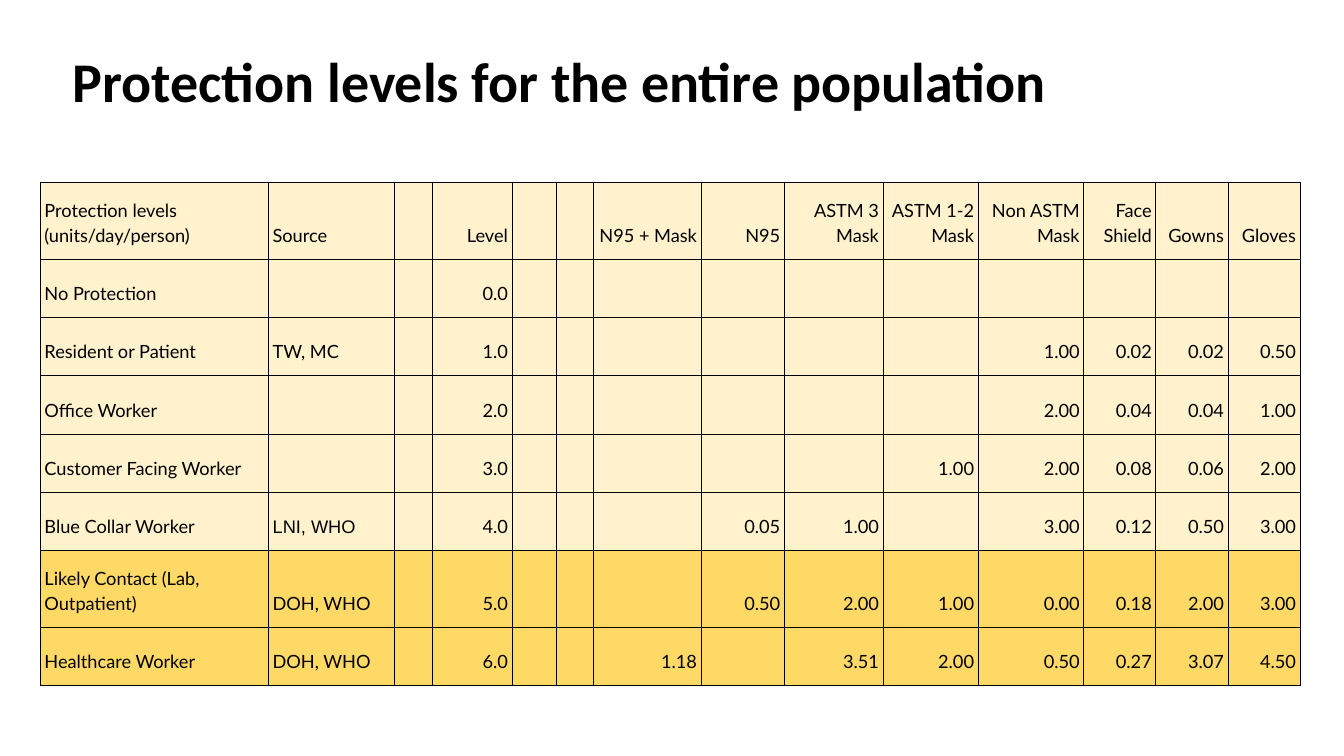
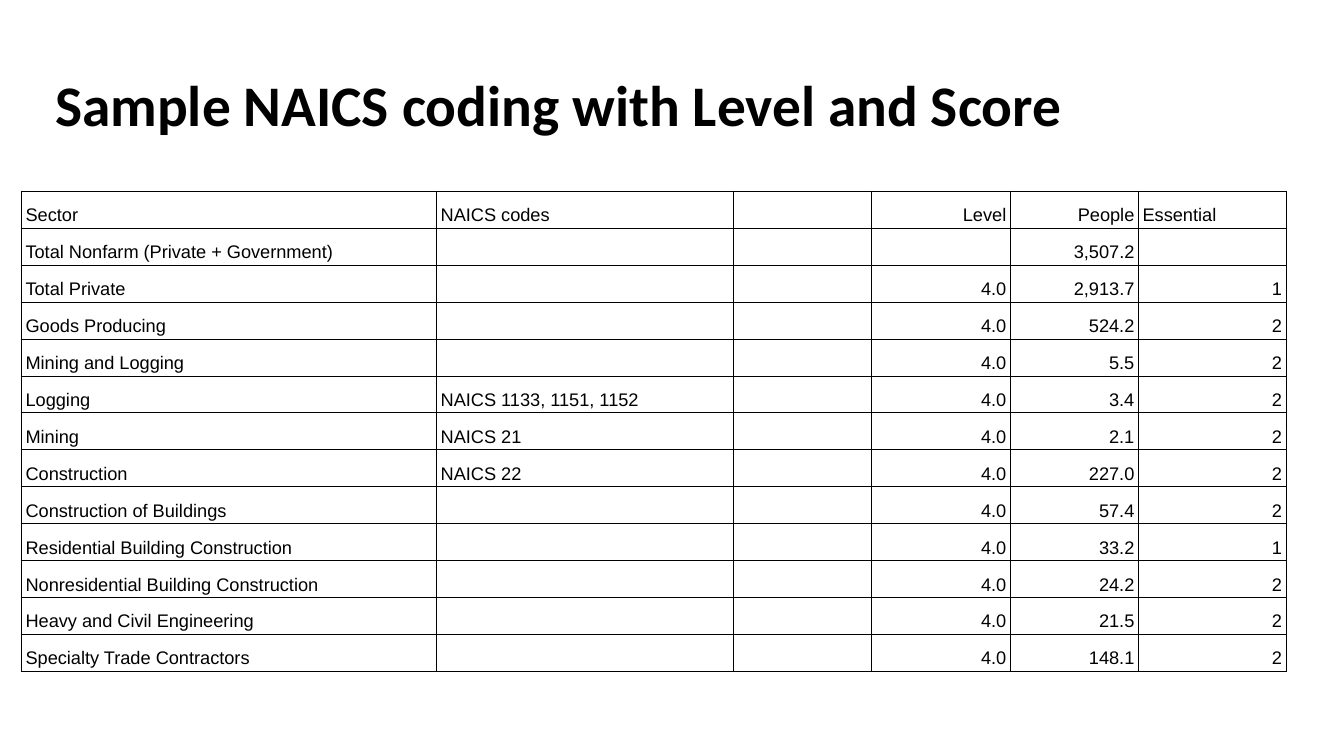
from pptx import Presentation
from pptx.dml.color import RGBColor
from pptx.enum.text import MSO_ANCHOR as Anchor, PP_ALIGN as Align
from pptx.oxml import parse_xml
from pptx.oxml.ns import nsdecls
from pptx.util import Pt

BLACK = "000000"
CREAM = "FFF2CC"
GOLD = "FFD966"
TITLE_FONT = "Calibri"
CELL_SIZE = 13
SIDE_INSET = 3
TEXT_COLS = 2

PROTECTION_WIDTHS = [163, 90, 27, 57, 31.5, 27, 76.5, 59.5, 70.5, 68, 75.5] + [51.5] * 3
PROTECTION_ROWS = [
    ("Protection levels (units/day/person)", "Source", "", "Level", "", "", "N95 + Mask", "N95",
     "ASTM 3 Mask", "ASTM 1-2 Mask", "Non ASTM Mask", "Face Shield", "Gowns", "Gloves"),
    ("No Protection", "", "", "0.0", "", "", "", "", "", "", "", "", "", ""),
    ("Resident or Patient", "TW, MC", "", "1.0", "", "", "", "", "", "", "1.00", "0.02", "0.02", "0.50"),
    ("Office Worker", "", "", "2.0", "", "", "", "", "", "", "2.00", "0.04", "0.04", "1.00"),
    ("Customer Facing Worker", "", "", "3.0", "", "", "", "", "", "1.00", "2.00", "0.08", "0.06", "2.00"),
    ("Blue Collar Worker", "LNI, WHO", "", "4.0", "", "", "", "0.05", "1.00", "", "3.00", "0.12", "0.50", "3.00"),
    ("Likely Contact (Lab, Outpatient)", "DOH, WHO", "", "5.0", "", "", "", "0.50", "2.00", "1.00", "0.00",
     "0.18", "2.00", "3.00"),
    ("Healthcare Worker", "DOH, WHO", "", "6.0", "", "", "1.18", "", "3.51", "2.00", "0.50", "0.27", "3.07", "4.50"),
]
PROTECTION_HEIGHTS = [55] + [41.6] * 5 + [55, 41.6]
PROTECTION_FILLS = [CREAM] * 6 + [GOLD] * 2

SECTOR_WIDTHS = [296.5, 212, 99, 99, 91.5, 105.5]
SECTOR_ROWS = [
    ("Sector", "NAICS codes", "", "Level", "People", "Essential"),
    ("Total Nonfarm (Private + Government)", "", "", "", "3,507.2", ""),
    ("Total Private", "", "", "4.0", "2,913.7", "1"),
    ("Goods Producing", "", "", "4.0", "524.2", "2"),
    ("Mining and Logging", "", "", "4.0", "5.5", "2"),
    ("Logging", "NAICS 1133, 1151, 1152", "", "4.0", "3.4", "2"),
    ("Mining", "NAICS 21", "", "4.0", "2.1", "2"),
    ("Construction", "NAICS 22", "", "4.0", "227.0", "2"),
    ("Construction of Buildings", "", "", "4.0", "57.4", "2"),
    ("Residential Building Construction", "", "", "4.0", "33.2", "1"),
    ("Nonresidential Building Construction", "", "", "4.0", "24.2", "2"),
    ("Heavy and Civil Engineering", "", "", "4.0", "21.5", "2"),
    ("Specialty Trade Contractors", "", "", "4.0", "148.1", "2"),
]
SECTOR_HEIGHTS = [26.4] * len(SECTOR_ROWS)
SECTOR_FILLS = [None] * len(SECTOR_ROWS)


def color(value):
    return RGBColor.from_string(value)


def add_run(p, text, font, size, bold=False):
    r = p.add_run()
    r.text = text
    r.font.name = font
    r.font.size = Pt(size)
    r.font.bold = bold
    r.font.color.rgb = color(BLACK)


def add_title(s, text, x, y, w, h, size):
    tf = s.shapes.add_textbox(Pt(x), Pt(y), Pt(w), Pt(h)).text_frame
    tf.word_wrap = True
    tf.vertical_anchor = Anchor.TOP
    tf.margin_left = tf.margin_right = tf.margin_top = tf.margin_bottom = Pt(9.4)
    add_run(tf.paragraphs[0], text, TITLE_FONT, size, bold=True)


def set_borders(cell):
    tc_pr = cell._tc.get_or_add_tcPr()
    for side in ("lnL", "lnR", "lnT", "lnB"):
        tc_pr.append(parse_xml(
            f'<a:{side} {nsdecls("a")} w="{Pt(0.75)}"><a:solidFill>'
            f'<a:srgbClr val="{BLACK}"/></a:solidFill></a:{side}>'))


def fill_cell(cell, fill):
    if fill:
        cell.fill.solid()
        cell.fill.fore_color.rgb = color(fill)
    else:
        cell.fill.background()


def write_cell(cell, text, font, align, inset):
    cell.vertical_anchor = Anchor.BOTTOM
    cell.margin_left = cell.margin_right = Pt(SIDE_INSET)
    cell.margin_top = cell.margin_bottom = Pt(inset)
    p = cell.text_frame.paragraphs[0]
    p.alignment = align
    p.line_spacing = 1.15
    if text:
        add_run(p, text, font, CELL_SIZE)
    else:
        p._p.get_or_add_endParaRPr().set("sz", str(CELL_SIZE * 100))


def add_grid(s, x, y, widths, heights, rows, fills, font, inset, left_texts=(), other_fonts=None):
    fonts = other_fonts or {}
    table = s.shapes.add_table(len(rows), len(widths), Pt(x), Pt(y),
                               Pt(sum(widths)), Pt(sum(heights))).table
    table.first_row = table.horz_banding = False
    for col, width in zip(table.columns, widths):
        col.width = Pt(width)
    for i, (row, height, fill) in enumerate(zip(rows, heights, fills)):
        table.rows[i].height = Pt(height)
        for j, text in enumerate(row):
            cell = table.cell(i, j)
            is_left = j < TEXT_COLS or text in left_texts
            set_borders(cell)
            fill_cell(cell, fill)
            write_cell(cell, text, fonts.get(text, font), Align.LEFT if is_left else Align.RIGHT, inset)


def add_slide(prs):
    return prs.slides.add_slide(prs.slide_layouts[6])


def main():
    prs = Presentation()
    prs.slide_width, prs.slide_height = Pt(960), Pt(540)

    s = add_slide(prs)
    add_title(s, "Protection levels for the entire population", 42.5, 24, 720, 94, 40)
    add_grid(s, 28.8, 130.3, PROTECTION_WIDTHS, PROTECTION_HEIGHTS, PROTECTION_ROWS,
             PROTECTION_FILLS, "Lato", 9.4, other_fonts={"LNI, WHO": "Arial"})

    s = add_slide(prs)
    add_grid(s, 15.3, 136.6, SECTOR_WIDTHS, SECTOR_HEIGHTS, SECTOR_ROWS,
             SECTOR_FILLS, "Arial", 2, left_texts=("Essential",))
    add_title(s, "Sample NAICS coding with Level and Score", 30, 39.6, 807, 70, 41)

    prs.save("out.pptx")


if __name__ == "__main__":
    main()
